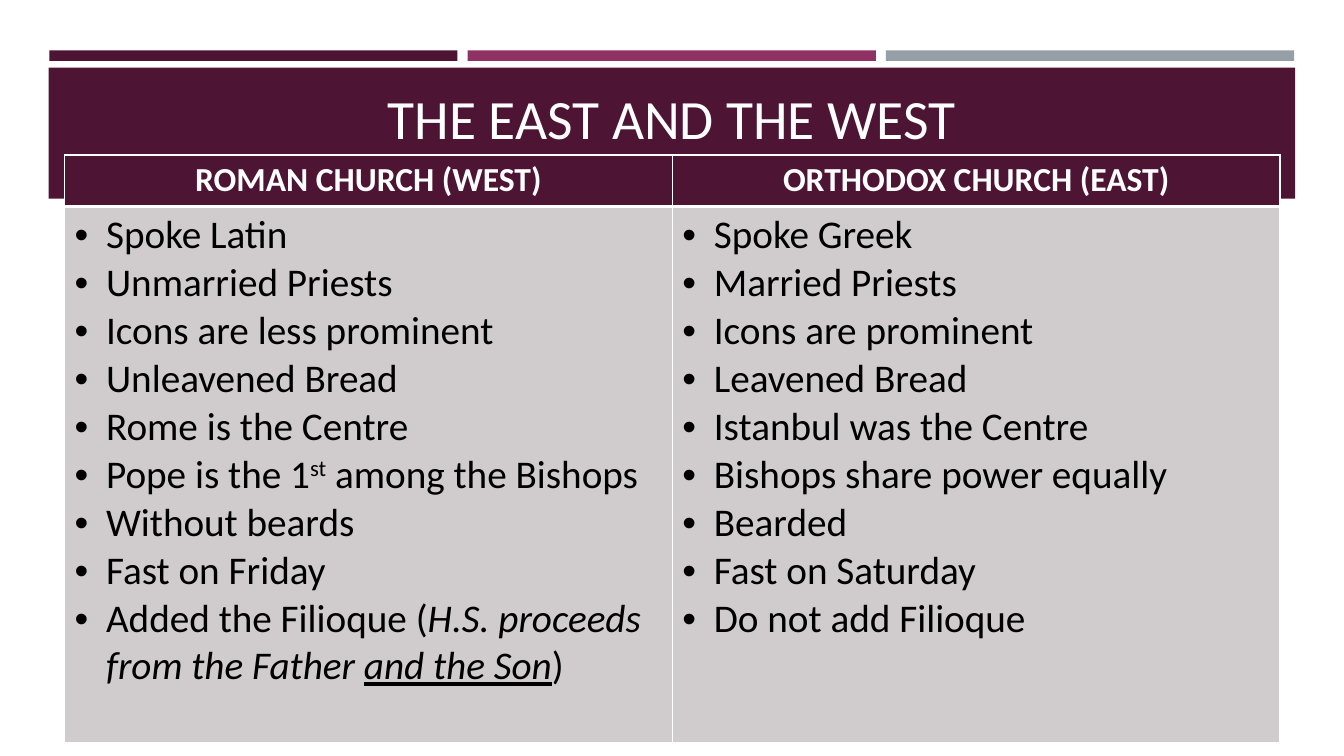
from collections import namedtuple
from dataclasses import dataclass

from lxml.etree import SubElement
from pptx import Presentation
from pptx.dml.color import RGBColor
from pptx.enum.shapes import MSO_SHAPE
from pptx.enum.text import MSO_ANCHOR, PP_ALIGN
from pptx.oxml.ns import qn
from pptx.util import Pt

Box = namedtuple("Box", "left top width height")


@dataclass(frozen=True)
class Theme:
    """Colours and type sizes of the deck."""

    plum: RGBColor = RGBColor(0x4D, 0x14, 0x34)
    magenta: RGBColor = RGBColor(0x90, 0x31, 0x63)
    slate: RGBColor = RGBColor(0x96, 0x9F, 0xA7)
    cell: RGBColor = RGBColor(0xD0, 0xCC, 0xCE)
    white: RGBColor = RGBColor(0xFF, 0xFF, 0xFF)
    black: RGBColor = RGBColor(0, 0, 0)
    font: str = "Calibri"
    title_size: float = 39.6
    heading_size: float = 24
    body_size: float = 28


THEME = Theme()
TITLE = "THE EAST AND THE WEST"
HEADINGS = ["ROMAN CHURCH (WEST)", "ORTHODOX CHURCH (EAST)"]
WEST = [
    "Spoke Latin",
    "Unmarried Priests",
    "Icons are less prominent",
    "Unleavened Bread",
    "Rome is the Centre",
    [("Pope is the 1", {}), ("st", {"baseline": "30000"}), (" among the Bishops", {})],
    "Without beards",
    "Fast on Friday",
    [
        ("Added the Filioque (", {}),
        ("H.S. proceeds from the Father ", {"italic": True}),
        ("and the Son", {"italic": True, "underline": True}),
        (")", {}),
    ],
]
EAST = [
    "Spoke Greek",
    "Married Priests",
    "Icons are prominent",
    "Leavened Bread",
    "Istanbul was the Centre",
    "Bishops share power equally",
    "Bearded",
    "Fast on Saturday",
    "Do not add Filioque",
]


def add_span(para, text, size, color, **formats):
    """Append one formatted run to a paragraph."""
    span = para.add_run()
    span.text = text
    baseline = formats.pop("baseline", None)
    for name, value in {"name": THEME.font, "size": Pt(size), **formats}.items():
        setattr(span.font, name, value)
    span.font.color.rgb = color
    if baseline:
        span.font._element.set("baseline", baseline)


def add_bar(page, box, color):
    """Draw a plain filled rectangle."""
    bar = page.shapes.add_shape(MSO_SHAPE.RECTANGLE, *map(Pt, box))
    bar.shadow.inherit = False
    bar.fill.solid()
    bar.fill.fore_color.rgb = color
    bar.line.fill.background()


def add_accent_bars(page, box, gap=7.2):
    """Split the box into three equal coloured bars."""
    colors = [THEME.plum, THEME.magenta, THEME.slate]
    width = (box.width - gap * (len(colors) - 1)) / len(colors)
    for index, color in enumerate(colors):
        left = box.left + index * (width + gap)
        add_bar(page, Box(left, box.top, width, box.height), color)


def add_title_band(page, box):
    """Draw the band and the centred title in its upper part."""
    add_bar(page, box, THEME.plum)
    title_box = Box(box.left + 11.5, box.top + 7.2, box.width - 23, 55.44)
    frame = page.shapes.add_textbox(*map(Pt, title_box)).text_frame
    for name, value in {"word_wrap": True, "vertical_anchor": MSO_ANCHOR.BOTTOM}.items():
        setattr(frame, name, value)
    para = frame.paragraphs[0]
    para.alignment = PP_ALIGN.CENTER
    add_span(para, TITLE, THEME.title_size, THEME.white)


def style_cell(cell, fill, top, bottom):
    """Give a cell its white borders and its fill."""
    properties = cell._tc.get_or_add_tcPr()
    for side, width in {"L": 1, "R": 1, "T": top, "B": bottom}.items():
        line = SubElement(properties, qn(f"a:ln{side}"), w=str(Pt(width)))
        solid = SubElement(line, qn("a:solidFill"))
        SubElement(solid, qn("a:srgbClr"), val=str(THEME.white))
    cell.fill.solid()
    cell.fill.fore_color.rgb = fill


def add_bullets(frame, items, indent=22.5):
    """Fill a text frame with one bulleted paragraph per item."""
    for index, item in enumerate(items):
        para = frame.add_paragraph() if index else frame.paragraphs[0]
        properties = para._p.get_or_add_pPr()
        for name, value in {"marL": Pt(indent), "indent": -Pt(indent)}.items():
            properties.set(name, str(value))
        SubElement(properties, qn("a:buFont"), typeface="Arial")
        SubElement(properties, qn("a:buChar"), char="•")
        spans = [(item, {})] if isinstance(item, str) else item
        for text, formats in spans:
            add_span(para, text, THEME.body_size, THEME.black, **formats)


def add_comparison(page, box, heading_height=36.8):
    """Place the two-column table of church customs."""
    table = page.shapes.add_table(2, 2, *map(Pt, box)).table
    table.horz_banding = False
    table.rows[0].height = Pt(heading_height)
    table.rows[1].height = Pt(box.height - heading_height)
    for column, (heading, items) in enumerate(zip(HEADINGS, [WEST, EAST])):
        head, body = table.cell(0, column), table.cell(1, column)
        style_cell(head, THEME.plum, top=1, bottom=3)
        style_cell(body, THEME.cell, top=3, bottom=1)
        para = head.text_frame.paragraphs[0]
        para.alignment = PP_ALIGN.CENTER
        add_span(para, heading, THEME.heading_size, THEME.white, bold=True)
        add_bullets(body.text_frame, items)


def main():
    """Build and save the deck."""
    deck = Presentation()
    deck.slide_width, deck.slide_height = Pt(960), Pt(540)
    page = deck.slides.add_slide(deck.slide_layouts[6])
    add_accent_bars(page, Box(35.2, 36, 889.2, 7.5))
    add_title_band(page, Box(34.7, 48.4, 890.4, 93.6))
    add_comparison(page, Box(46.1, 110.7, 868.3, 420))
    deck.save("out.pptx")


if __name__ == "__main__":
    main()
